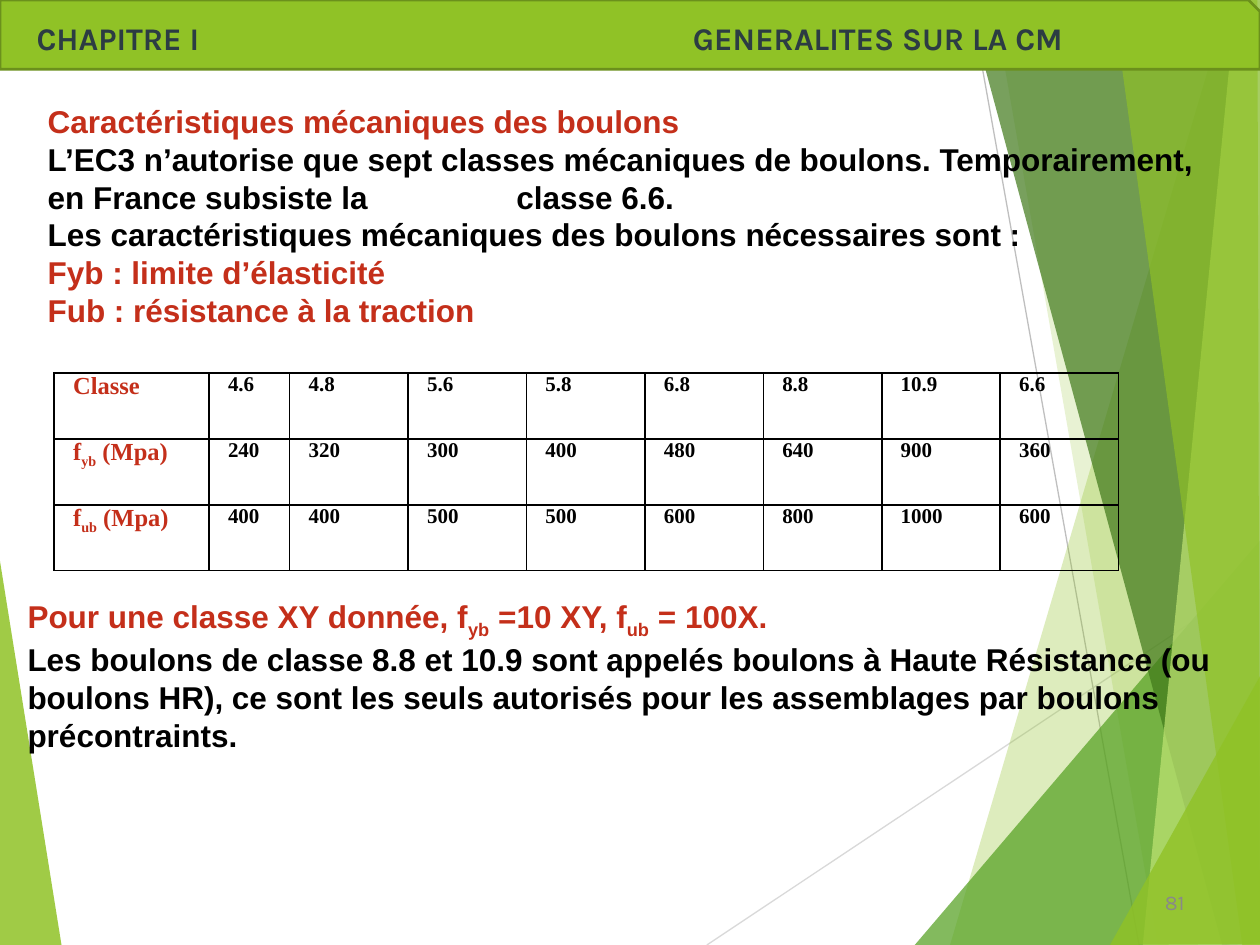
from lxml.etree import SubElement as Sub
from pptx import Presentation
from pptx.dml.color import RGBColor as RGB
from pptx.enum.shapes import MSO_CONNECTOR as LINK, MSO_SHAPE as SHAPE
from pptx.enum.text import MSO_ANCHOR as ANCHOR, MSO_AUTO_SIZE as AUTO, PP_ALIGN as ALIGN
from pptx.oxml.ns import qn
from pptx.util import Inches, Pt

LIME = RGB(0x90, 0xC2, 0x26)
LEAF = RGB(0x54, 0xA0, 0x21)
PINE = RGB(0x3F, 0x78, 0x19)
PALE = RGB(0xC0, 0xE4, 0x74)
EDGE = RGB(0x6B, 0x90, 0x1C)
SLATE = RGB(0x2C, 0x3C, 0x43)
RED = RGB(0xC4, 0x2F, 0x1A)
BLACK = RGB(0, 0, 0)
GREY = RGB(0x89, 0x89, 0x89)
SILVER = RGB(0xBF, 0xBF, 0xBF)
MIST = RGB(0xD9, 0xD9, 0xD9)


def write(par, text, tint, size, face="Arial", bold=True):
    style = {"name": face, "size": Pt(size), "bold": bold}
    for spot, part in enumerate(text.split("_")):
        run = par.add_run()
        run.text = part
        for key, val in style.items():
            setattr(run.font, key, val)
        run.font.color.rgb = tint
        if spot % 2:
            run._r.get_or_add_rPr().set("baseline", "-25000")


def tab(par, place):
    stops = Sub(par._p.get_or_add_pPr(), qn("a:tabLst"))
    Sub(stops, qn("a:tab"), pos=str(Inches(place)), algn="l")


deck = Presentation()
deck.slide_width, deck.slide_height = Inches(10), Inches(7.5)
slide = deck.slides.add_slide(deck.slide_layouts[6])
shapes = slide.shapes

facets = [
    (LIME, 85, [(-0.01, 4.39), (0.49, 7.51), (-0.01, 7.5)]),
    (LIME, 30, [(9.75, 0), (7.54, 7.5), (10.02, 7.51), (10.01, 0.01)]),
    (LIME, 20, [(7.88, -0.01), (9.19, 7.5), (10.01, 7.5), (10.01, -0.01)]),
    (LEAF, 72, [(7.26, 7.5), (10, 4.29), (10.01, 7.5)]),
    (PINE, 70, [(7.67, -0.01), (9.7, 7.5), (10.01, 7.49), (10.01, -0.01)]),
    (PALE, 70, [(9.81, -0.01), (9.07, 7.5), (10.01, 7.5), (10, -0.01)]),
    (LIME, 65, [(8.83, -0.01), (9.86, 7.5), (10, 7.5), (9.98, -0.01)]),
    (LIME, 80, [(8.81, 7.5), (10.01, 5.35), (10.01, 7.49)]),
]
rays = [(MIST, 5.61, 7.5, 10.01, 4.57), (SILVER, 7.7, 0, 9.04, 7.5)]

for rank, (tint, alpha, spots) in enumerate(facets):
    dots = [(Inches(x), Inches(y)) for x, y in spots]
    pen = shapes.build_freeform(*dots[0], scale=1.0)
    pen.add_line_segments(dots[1:], close=True)
    facet = pen.convert_to_shape()
    facet.shadow.inherit = False
    facet.line.fill.background()
    facet.fill.solid()
    facet.fill.fore_color.rgb = tint
    shade = facet._element.spPr.find(qn("a:solidFill"))[0]
    Sub(shade, qn("a:alpha"), val=str(alpha * 1000))
    if rank == 0:
        for hue, *ends in rays:
            ray = shapes.add_connector(LINK.STRAIGHT, *map(Inches, ends))
            ray.line.color.rgb = hue
            ray.line.width = Pt(0.75)
            Sub(ray._element.spPr, qn("a:effectLst"))

band = shapes.add_shape(SHAPE.SNIP_1_RECTANGLE, 0, 0, Inches(10), Inches(0.55))
band.shadow.inherit = False
band.fill.solid()
band.fill.fore_color.rgb = LIME
band.line.color.rgb = EDGE
band.line.width = Pt(1.5)
frame = band.text_frame
frame.margin_left = Inches(0.29)
frame.vertical_anchor = ANCHOR.MIDDLE
par = frame.paragraphs[0]
par.alignment = ALIGN.LEFT
tab(par, 5.21)
write(par, "CHAPITRE I\tGENERALITES SUR LA CM", SLATE, 18, "Karla")

notes = [
    ((0.28, 0.76, 9.53, 2.22), [
        (RED, "Caractéristiques mécaniques des boulons"),
        (BLACK, "L’EC3 n’autorise que sept classes mécaniques de boulons. "
                "Temporairement, en France subsiste la\tclasse 6.6."),
        (BLACK, "Les caractéristiques mécaniques des boulons nécessaires sont :"),
        (RED, "Fyb : limite d’élasticité"),
        (RED, "Fub : résistance à la traction"),
    ]),
    ((0.12, 4.69, 9.69, 1.62), [
        (RED, "Pour une classe XY donnée, f_yb_ =10 XY, f_ub_ = 100X."),
        (BLACK, "Les boulons de classe 8.8 et 10.9 sont appelés boulons à Haute "
                "Résistance (ou boulons HR), ce sont les seuls autorisés pour les "
                "assemblages par boulons précontraints."),
    ]),
]
for area, lines in notes:
    frame = shapes.add_textbox(*map(Inches, area)).text_frame
    frame.word_wrap = True
    frame.auto_size = AUTO.SHAPE_TO_FIT_TEXT
    for rank, (tint, text) in enumerate(lines):
        par = frame.add_paragraph() if rank else frame.paragraphs[0]
        if "\t" in text:
            tab(par, 3.72)
        write(par, text, tint, 18)

rows = [
    ["Classe", "4.6", "4.8", "5.6", "5.8", "6.8", "8.8", "10.9", "6.6"],
    ["f_yb_ (Mpa)", "240", "320", "300", "400", "480", "640", "900", "360"],
    ["f_ub_ (Mpa)", "400", "400", "500", "500", "600", "800", "1000", "600"],
]
widths = [1.23, 0.64] + [0.94] * 7
grid = shapes.add_table(3, 9, Inches(0.43), Inches(2.96), Inches(8.43), Inches(1.57)).table
grid.first_row = grid.horz_banding = False
for col, width in zip(grid.columns, widths):
    col.width = Inches(width)
pads = {f"margin_{side}": 0 for side in ("left", "right", "top", "bottom")}
for down, row in enumerate(rows):
    grid.rows[down].height = Inches(1.57 / 3)
    for across, text in enumerate(row):
        cell = grid.cell(down, across)
        for key, val in pads.items():
            setattr(cell, key, val)
        props = cell._tc.get_or_add_tcPr()
        for side in ("L", "R", "T", "B"):
            rule = Sub(props, qn(f"a:ln{side}"), w=str(Pt(1)))
            Sub(Sub(rule, qn("a:solidFill")), qn("a:srgbClr"), val=str(BLACK))
        cell.fill.background()
        par = cell.text_frame.paragraphs[0]
        dent = par._p.get_or_add_pPr()
        dent.set("marL", str(Inches(0.05)))
        dent.set("indent", str(Inches(0.1)))
        tint, size = (BLACK, 12) if across else (RED, 14)
        write(par, text, tint, size, "Times New Roman")

page = shapes.add_textbox(Inches(8.9), Inches(6.96), Inches(0.6), Inches(0.4)).text_frame
page.word_wrap = True
page.vertical_anchor = ANCHOR.MIDDLE
page.paragraphs[0].alignment = ALIGN.RIGHT
write(page.paragraphs[0], "81", GREY, 12, "Karla", False)

deck.save("out.pptx")
